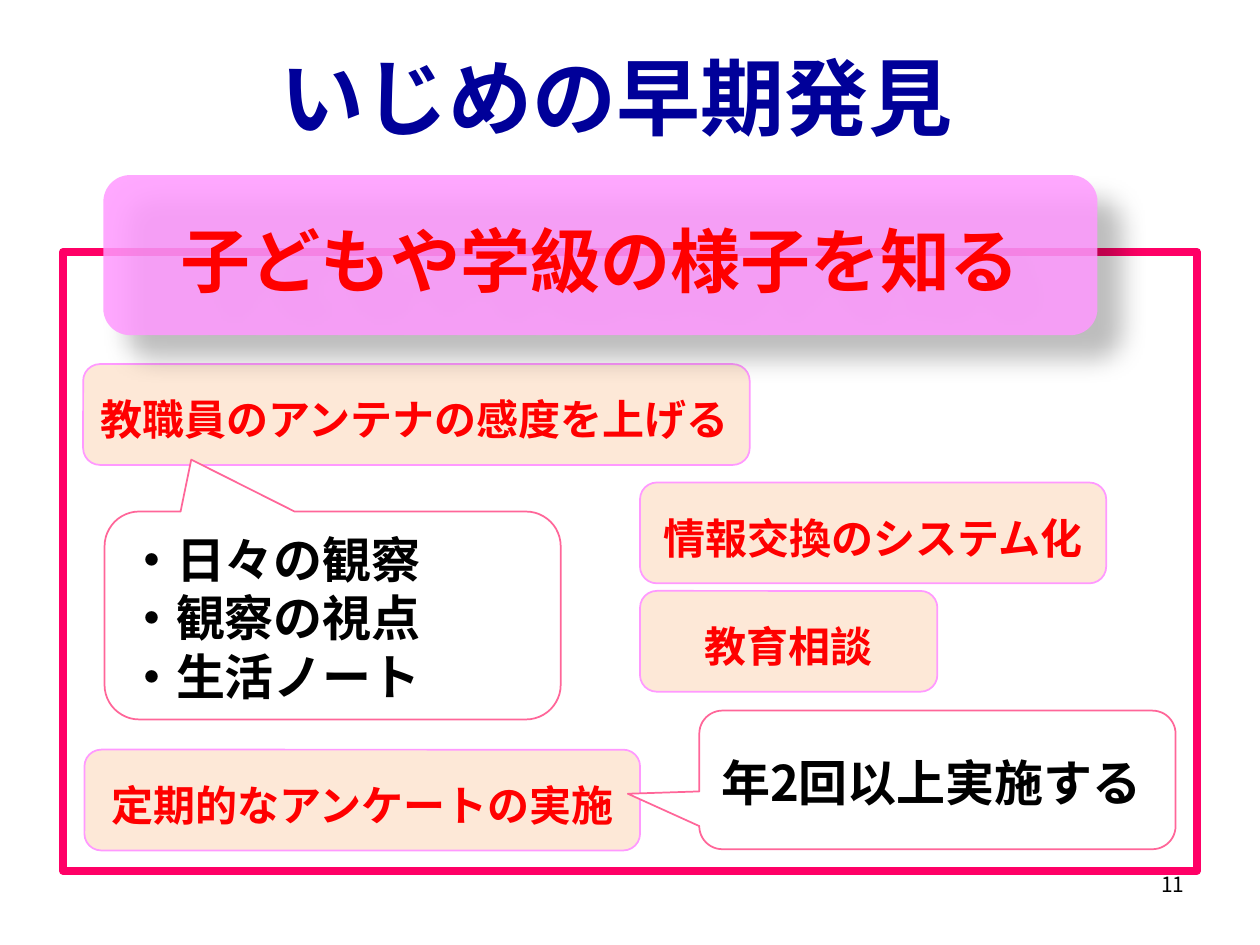
from lxml import etree
from pptx import Presentation
from pptx.dml.color import RGBColor
from pptx.enum.shapes import MSO_SHAPE
from pptx.enum.text import MSO_ANCHOR, MSO_AUTO_SIZE, PP_ALIGN
from pptx.oxml import parse_xml
from pptx.oxml.ns import qn
from pptx.util import Inches, Pt

RECT, ROUND = MSO_SHAPE.RECTANGLE, MSO_SHAPE.ROUNDED_RECTANGLE
BUBBLE = MSO_SHAPE.ROUNDED_RECTANGULAR_CALLOUT
LEFT, CENTER, RIGHT = PP_ALIGN.LEFT, PP_ALIGN.CENTER, PP_ALIGN.RIGHT
MIDDLE, FIXED = MSO_ANCHOR.MIDDLE, MSO_AUTO_SIZE.NONE
GOTHIC = "Noto Sans CJK JP"
RED, BLACK, WHITE = "FF0000", "000000", "FFFFFF"
PINK, PEACH, ROSE, FRAME = "FF99FF", "FDE8D7", "FF6699", "FF0066"
SHADOW = """<a:effectLst xmlns:a="http://schemas.openxmlformats.org/drawingml/2006/main">
<a:outerShdw blurRad="190500" dist="228600" dir="2700000" algn="tl" rotWithShape="0">
<a:srgbClr val="000000"><a:alpha val="30000"/></a:srgbClr></a:outerShdw></a:effectLst>"""


def color(code):
    return RGBColor.from_string(code)


class Board:
    def __init__(self, slide):
        self.slide = slide

    def letter(self, shape, lines, size, tint, align=CENTER, font=GOTHIC,
               bold=True, pad=(0.1, 0.05, 0.1, 0.05)):
        frame = shape.text_frame
        sides = ("margin_left", "margin_top", "margin_right", "margin_bottom")
        style = dict(zip(sides, map(Inches, pad)))
        style.update(word_wrap=True, auto_size=FIXED, vertical_anchor=MIDDLE)
        for key, value in style.items():
            setattr(frame, key, value)
        frame.text = "\n".join(lines)
        for para in frame.paragraphs:
            para.alignment = align
            for run in para.runs:
                for key, value in dict(size=Pt(size), bold=bold, name=font).items():
                    setattr(run.font, key, value)
                run.font.color.rgb = color(tint)
                if font == GOTHIC:
                    east = etree.SubElement(run.font._element, qn("a:ea"))
                    east.set("typeface", font)

    def title(self, text, *box):
        shape = self.slide.shapes.title
        for key, value in zip(("left", "top", "width", "height"), box):
            setattr(shape, key, Inches(value))
        self.letter(shape, [text], 48, "000099", font="Arial")

    def shape(self, kind, box, fill=None, line=None, width=1):
        shape = self.slide.shapes.add_shape(kind, *map(Inches, box))
        shape.shadow.inherit = False
        if fill:
            shape.fill.solid()
            shape.fill.fore_color.rgb = color(fill)
        else:
            shape.fill.background()
        if line:
            shape.line.color.rgb = color(line)
            shape.line.width = Pt(width)
        else:
            shape.line.fill.background()
        return shape

    def label(self, text, left, top, width, align=CENTER):
        shape = self.shape(ROUND, (left, top, width, 0.8), PEACH, PINK)
        self.letter(shape, [text], 24, RED, align, pad=(0.1, 0.12, 0.1, 0.05))

    def banner(self, text, *box):
        shape = self.shape(ROUND, box, PINK)
        tone = shape._element.spPr.find(qn("a:solidFill"))[0]
        etree.SubElement(tone, qn("a:alpha")).set("val", "85000")
        old = shape._element.spPr.find(qn("a:effectLst"))
        old.getparent().replace(old, parse_xml(SHADOW))
        self.letter(shape, [text], 40, RED, pad=(0.1, 0.12, 0.1, 0.05))

    def bubble(self, lines, box, tip, side):
        shape = self.shape(BUBBLE, box, WHITE, ROSE)
        for i, value in enumerate(tip):
            shape.adjustments[i] = value
        self.letter(shape, lines, 28, BLACK, LEFT, pad=(side, 0.08, side, 0.05))

    def number(self, text, *box):
        shape = self.slide.shapes.add_textbox(*map(Inches, box))
        self.letter(shape, [text], 12, BLACK, RIGHT, bold=False)


def main():
    deck = Presentation()
    deck.slide_width, deck.slide_height = Inches(10), Inches(7.5)
    board = Board(deck.slides.add_slide(deck.slide_layouts[5]))

    # Title and frame
    board.title("いじめの早期発見", 0.28, 0.28, 9.22, 0.97)
    board.shape(RECT, (0.5, 2, 9, 4.91), line=FRAME, width=4.5)

    # Banner, whose shadow falls on the first label
    board.label("教職員のアンテナの感度を上げる", 0.66, 2.89, 5.29, LEFT)
    board.banner("子どもや学級の様子を知る", 0.82, 1.39, 7.89, 1.27)

    # Measures
    board.label("教育相談", 5.08, 4.69, 2.36)
    board.label("情報交換のシステム化", 5.08, 3.83, 3.7)
    board.label("定期的なアンケートの実施", 0.67, 5.95, 4.41)

    # Callouts
    board.bubble(["・日々の観察", "・観察の視点", "・生活ノート"],
                 (0.83, 4.06, 3.62, 1.65), (-0.31, -0.75), 0.1)
    board.bubble(["年2回以上実施する"],
                 (5.55, 5.64, 3.78, 1.1), (-0.65, 0.1), 0.12)

    # Page number
    board.number("11", 7.4, 6.82, 2.1, 0.4)
    deck.save("out.pptx")


if __name__ == "__main__":
    main()
